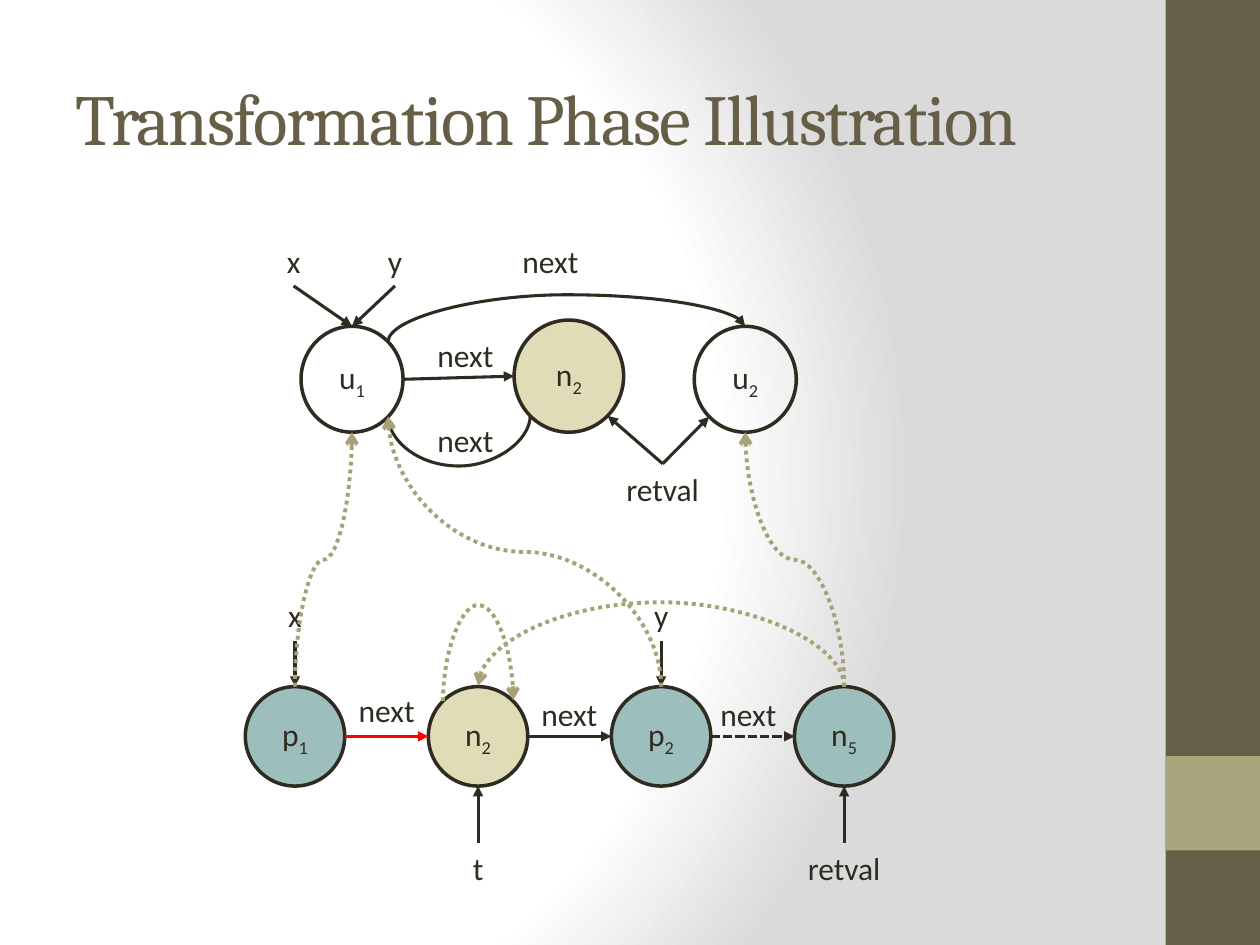
import math

from pptx import Presentation
from pptx import util as u
from pptx.dml.color import RGBColor
from pptx.enum import shapes, text
from pptx.oxml import parse_xml
from pptx.oxml.ns import nsdecls, qn
from lxml import etree

INK, OLIVE, BROWN, DOTTED = "2F2B20", "A9A57C", "675E47", "A6A278"
SAND, TEAL, RED = "DFDCB7", "9CBEBD", "FF0000"
NODE_WIDTH, NODE_GAP = 56.8, 104.6
RIGHT, BOTTOM, LEFT, TOP = 0, 90, 180, 270


def color(value):
    """Turn a hex string into a colour."""
    return RGBColor.from_string(value)


def paint_background(page):
    """Fill the page with a circular white to grey gradient."""
    stops = "".join(
        f'<a:gs pos="{place}"><a:srgbClr val="{value}"/></a:gs>'
        for place, value in ((0, "FFFFFF"), (75000, "FFFFFF"), (100000, "DADADA"))
    )
    background = parse_xml(
        f'<p:bg {nsdecls("p", "a")}><p:bgPr><a:gradFill rotWithShape="1"><a:gsLst>{stops}</a:gsLst>'
        '<a:path path="circle"><a:fillToRect l="20000" t="50000" r="100000" b="50000"/></a:path>'
        "</a:gradFill><a:effectLst/></p:bgPr></p:bg>"
    )
    page.element.cSld.insert(0, background)


def add_sidebar(page, left, top, width, height):
    """Draw the brown side band with its olive square."""
    for offset, size, fill in ((0, height, BROWN), (432, width, OLIVE)):
        band = page.shapes.add_shape(
            shapes.MSO_SHAPE.RECTANGLE, u.Pt(left), u.Pt(top + offset), u.Pt(width), u.Pt(size))
        band.shadow.inherit = False
        band.fill.solid()
        band.fill.fore_color.rgb = color(fill)
        band.line.fill.background()


def add_title(page, left, top, width, height):
    """Place and format the title."""
    title = page.shapes.title
    title.left, title.top, title.width, title.height = map(u.Pt, (left, top, width, height))
    frame = title.text_frame
    frame.text = "Transformation Phase Illustration"
    frame.vertical_anchor = text.MSO_ANCHOR.MIDDLE
    frame.auto_size = text.MSO_AUTO_SIZE.NONE
    para = frame.paragraphs[0]
    para.alignment = text.PP_ALIGN.LEFT
    span = para.runs[0]
    span.font.name, span.font.size = "Cambria", u.Pt(41)
    span.font.color.rgb = color(BROWN)
    span.font._element.set("spc", "-100")


def format_text(frame):
    """Centre a frame's text and give it the diagram's font."""
    frame.vertical_anchor = text.MSO_ANCHOR.MIDDLE
    frame.word_wrap = False
    para = frame.paragraphs[0]
    para.alignment = text.PP_ALIGN.CENTER
    for span in para.runs:
        span.font.name, span.font.size = "Calibri", u.Pt(18)
        span.font.color.rgb = color(INK)


def add_label(page, words, center, top, width, height=28.8):
    """Write a label centred on a horizontal position."""
    box = page.shapes.add_textbox(u.Pt(center - width / 2), u.Pt(top), u.Pt(width), u.Pt(height))
    box.text_frame.text = words
    format_text(box.text_frame)


def add_node(page, name, left, top, width, height, fill=None):
    """Draw a circle whose name ends in a subscript digit."""
    node = page.shapes.add_shape(
        shapes.MSO_SHAPE.OVAL, u.Pt(left), u.Pt(top), u.Pt(width), u.Pt(height))
    node.shadow.inherit = False
    if fill:
        node.fill.solid()
        node.fill.fore_color.rgb = color(fill)
    else:
        node.fill.background()
    node.line.color.rgb = color(INK)
    node.line.width = u.Pt(2)
    frame = node.text_frame
    frame.text = name[0]
    digit = frame.paragraphs[0].add_run()
    digit.text = name[1]
    digit.font._element.set("baseline", "-25000")
    format_text(frame)
    return node


def rim(node, degrees):
    """Give the point on a circle's edge at a clockwise angle from the right."""
    angle = math.radians(degrees)
    return (node.left.pt + node.width.pt / 2 * (1 + math.cos(angle)),
            node.top.pt + node.height.pt / 2 * (1 + math.sin(angle)))


def format_line(line, ink, weight, dash, head):
    """Set a connector's colour, weight, dash and arrowhead."""
    line.line.color.rgb = color(ink)
    line.line.width = u.Pt(weight)
    outline = line.line._get_or_add_ln()
    if dash:
        etree.SubElement(outline, qn("a:prstDash"), val=dash)
    etree.SubElement(outline, qn("a:tailEnd"), type=head)
    etree.SubElement(line.element.spPr, qn("a:effectLst"))


def add_arrow(page, start, end, ink=INK, dash=None):
    """Draw a straight arrow."""
    line = page.shapes.add_connector(
        shapes.MSO_CONNECTOR.STRAIGHT, *map(u.Pt, (*start, *end)))
    format_line(line, ink, 1.75, dash, "triangle")


def add_curve(page, start, end, level, ink=INK, weight=1.75, dash=None, head="triangle"):
    """Draw a curve that leaves and arrives vertically and turns at a level."""
    across, down = end[0] - start[0], end[1] - start[1]
    if abs(down) < 0.1:
        down = -0.72
    width, height = abs(down), abs(across)
    left = start[0] + across / 2 - width / 2
    top = start[1] + down / 2 - height / 2
    line = page.shapes.add_connector(
        shapes.MSO_CONNECTOR.CURVE, *map(u.Pt, (left, top, left + width, top + height)))
    frame = line.element.spPr.find(qn("a:xfrm"))
    mirrored = across < 0 and down < 0
    frame.set("rot", str((270 if mirrored else 90) * 60000))
    frame.set("flipH", str(int(across > 0 and down < 0)))
    frame.set("flipV", str(int(across > 0 or mirrored)))
    bend = round((level - start[1]) / down * 100000)
    guides = line.element.spPr.find(qn("a:prstGeom")).find(qn("a:avLst"))
    etree.SubElement(guides, qn("a:gd"), name="adj1", fmla=f"val {bend}")
    format_line(line, ink, weight, dash, head)


def add_upper_graph(page, left, top):
    """Draw the graph of u1, n2 and u2 and return its nodes."""
    u1, u2 = (add_node(page, name, left + x, top + 52.5, 58.3, 60.5)
              for name, x in (("u1", 17), ("u2", 241.7)))
    n2 = add_node(page, "n2", left + 138.8, top + 48.9, 62.6, 64.1, SAND)
    for x in (12.8, 70.7):
        add_arrow(page, (left + x, top + 29.4), rim(u1, TOP))
    add_arrow(page, rim(u1, RIGHT), rim(n2, LEFT))
    for target, side in ((n2, 45), (u2, 135)):
        add_arrow(page, (left + 223.7, top + 131), rim(target, side))
    add_curve(page, rim(u1, 315), rim(u2, TOP), top + 34.5)
    add_curve(page, rim(n2, 135), rim(u1, 45), top + 131.7)
    for words, x, y, width in (
            ("x", 12.8, 0.6, 24.5), ("y", 70.7, 0.6, 25), ("next", 159.6, 0.6, 52),
            ("next", 111, 54.6, 55), ("next", 111, 102.9, 55), ("retval", 223.7, 131, 62)):
        add_label(page, words, left + x, top + y, width)
    return u1, u2


def add_lower_graph(page, left, top):
    """Draw the chain from p1 to n5 and return its nodes."""
    chain = [add_node(page, name, left + i * NODE_GAP, top + 56.4, NODE_WIDTH, NODE_WIDTH, fill)
             for i, (name, fill) in enumerate(
                 (("p1", TEAL), ("n2", SAND), ("p2", TEAL), ("n5", TEAL)))]
    links = ((RED, None, 80.8, 54.2), (INK, None, 185.2, 56.4), (INK, "sysDash", 287.5, 56.4))
    for source, target, (ink, dash, x, y) in zip(chain, chain[1:], links):
        add_arrow(page, rim(source, RIGHT), rim(target, LEFT), ink, dash)
        add_label(page, "next", left + x, top + y, 50.4, 31)
    p1, n2, p2, n5 = chain
    for words, node in (("x", p1), ("y", p2)):
        x, y = rim(node, TOP)
        add_arrow(page, (x, y - 26), (x, y))
        add_label(page, words, x, top, 22.3, 31)
    for words, node, width in (("t", n2, 21), ("retval", n5, 56)):
        x, y = rim(node, BOTTOM)
        add_arrow(page, (x, y + 32.4), (x, y))
        add_label(page, words, x, y + 32.4, width)
    return chain


def add_mapping(page, upper, lower):
    """Draw the dotted curves between the two graphs."""
    u1, u2 = upper
    p1, n2, p2, n5 = lower
    row = rim(p1, TOP)[1]
    for start, end, level in (
            (rim(p1, TOP), rim(u1, BOTTOM), row - 72.5),
            (rim(p2, TOP), rim(u1, 45), row - 77),
            (rim(n5, TOP), rim(u2, BOTTOM), row - 72.5),
            (rim(n5, TOP), rim(n2, TOP), row - 49),
            (rim(n2, 225), rim(n2, 315), row - 47.5)):
        add_curve(page, start, end, level, DOTTED, 2.25, "sysDot", "arrow")


def main():
    """Build the slide and save it."""
    deck = Presentation()
    deck.slide_width, deck.slide_height = u.Pt(720), u.Pt(540)
    page = deck.slides.add_slide(deck.slide_layouts[5])
    paint_background(page)
    add_sidebar(page, 666, 0, 54, 540)
    add_title(page, 36, 21.6, 600, 90)
    lower = add_lower_graph(page, 140.2, 336)
    upper = add_upper_graph(page, 155, 134)
    add_mapping(page, upper, lower)
    deck.save("out.pptx")


if __name__ == "__main__":
    main()
